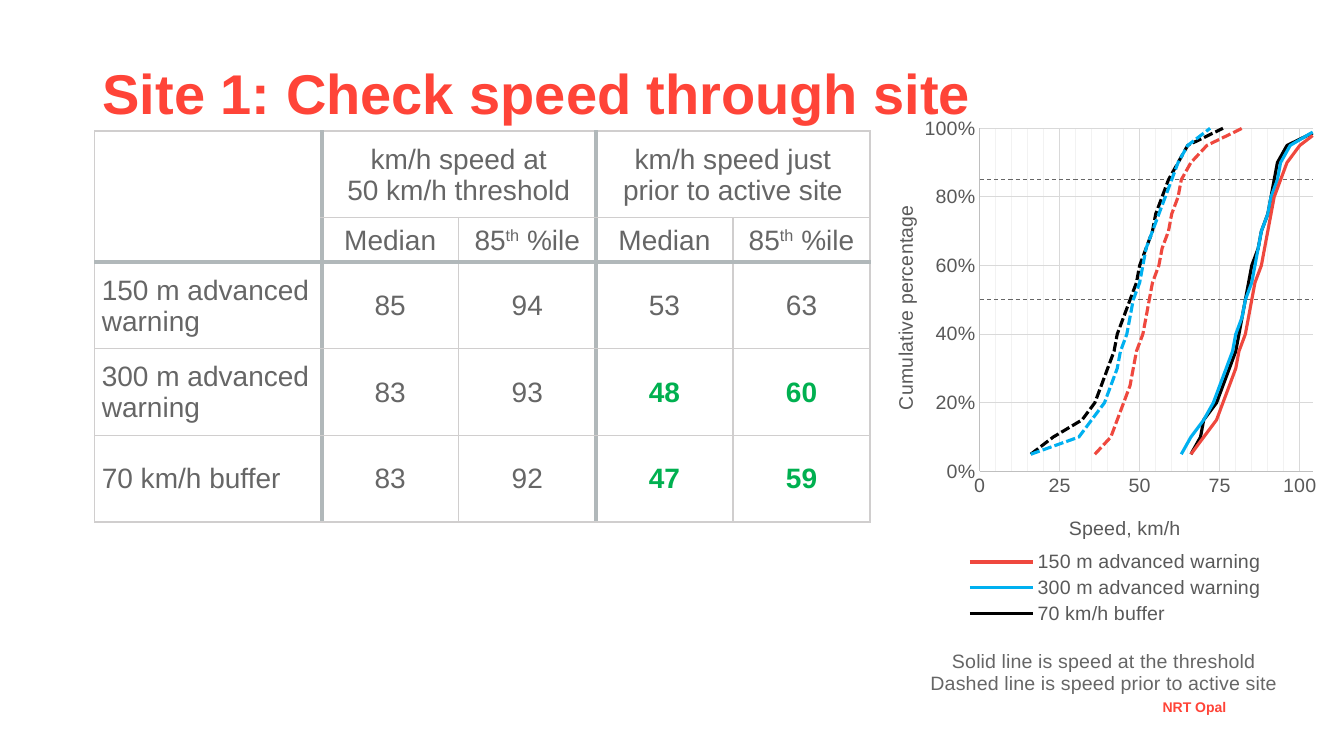
import pptx
import pptx.chart.data
import pptx.dml.color
import pptx.enum.chart
import pptx.enum.dml
import pptx.enum.text
import pptx.oxml.ns
import pptx.util
from lxml import etree

Inches, Pt = pptx.util.Inches, pptx.util.Pt
RGBColor = pptx.dml.color.RGBColor
ALIGN = pptx.enum.text.PP_ALIGN
ANCHOR = pptx.enum.text.MSO_ANCHOR
DASH = pptx.enum.dml.MSO_LINE
qn = pptx.oxml.ns.qn

RED = RGBColor(0xFF, 0x44, 0x38)
GREY = RGBColor(0x66, 0x66, 0x66)
GREEN = RGBColor(0x00, 0xB0, 0x50)
RULE_THIN = RGBColor(0xD0, 0xCE, 0xCE)
RULE_HEAVY = RGBColor(0xB1, 0xB8, 0xBA)
AXIS_TEXT = RGBColor(0x59, 0x59, 0x59)
AXIS_LINE = RGBColor(0xBF, 0xBF, 0xBF)
GRID = RGBColor(0xD9, 0xD9, 0xD9)
MINOR_GRID = RGBColor(0xF2, 0xF2, 0xF2)
LINE_RED = RGBColor(0xEF, 0x48, 0x3E)
LINE_BLUE = RGBColor(0x00, 0xB0, 0xF0)
BLACK = RGBColor(0x00, 0x00, 0x00)

TREATMENTS = ["150 m advanced warning", "300 m advanced warning", "70 km/h buffer"]
TREATMENT_COLORS = [LINE_RED, LINE_BLUE, BLACK]
SPEEDS = [[85, 94, 53, 63], [83, 93, 48, 60], [83, 92, 47, 59]]
IMPROVED = {48, 60, 47, 59}
MEASURES = [[("Median",)], [("85",), ("th", 30), (" %ile",)]]

PERCENTILES = [step / 20 for step in range(1, 21)]
THRESHOLD_SPEEDS = [
    [66, 70, 74, 76, 78, 80, 81, 83, 84, 85, 86, 88, 89, 90, 91, 92, 94, 96, 100, 107],
    [63, 66, 70, 73, 75, 77, 79, 80, 82, 83, 85, 86, 87, 88, 90, 91, 93, 94, 97, 106],
    [66, 69, 70, 74, 76, 78, 80, 81, 82, 83, 84, 85, 87, 88, 90, 91, 92, 93, 96, 107],
]
SITE_SPEEDS = [
    [36, 41, 43, 45, 47, 48, 49, 51, 52, 53, 54, 56, 57, 59, 60, 62, 63, 66, 71, 82],
    [16, 31, 35, 39, 41, 43, 44, 46, 47, 48, 50, 51, 52, 54, 56, 58, 60, 62, 65, 72],
    [16, 23, 32, 36, 38, 40, 42, 43, 45, 47, 49, 50, 52, 54, 55, 57, 59, 62, 65, 76],
]
REFERENCE_LEVELS = [0.85, 0.5]


def set_layout(parent, after, x, y, w=None, h=None, inner=False):
    """Place a chart part by fractions of the chart area."""
    for old in parent.findall(qn("c:layout")):
        parent.remove(old)
    layout = etree.Element(qn("c:layout"))
    manual = etree.SubElement(layout, qn("c:manualLayout"))
    settings = [("layoutTarget", "inner" if inner else None), ("xMode", "edge"),
                ("yMode", "edge"), ("x", x), ("y", y), ("w", w), ("h", h)]
    for tag, value in settings:
        if value is not None:
            etree.SubElement(manual, qn("c:" + tag)).set("val", str(value))
    if after is None:
        parent.insert(0, layout)
    else:
        after.addnext(layout)


def add_line(parent, tag, width, color):
    line = etree.SubElement(parent, qn(tag))
    line.set("w", str(Pt(width)))
    fill = etree.SubElement(line, qn("a:solidFill"))
    etree.SubElement(fill, qn("a:srgbClr")).set("val", str(color))


class SpeedSlide:
    font_name = "Arial"

    def __init__(self, slide):
        self.slide = slide

    def style(self, font, size, color, bold=False):
        font.name, font.size, font.bold = self.font_name, Pt(size), bold
        font.color.rgb = color

    def add_run(self, paragraph, text, size, color, bold=False, baseline=None):
        run = paragraph.add_run()
        run.text = text
        self.style(run.font, size, color, bold)
        if baseline:
            run.font._element.set("baseline", str(baseline * 1000))

    def text(self, box, text, size, color, align, anchor):
        frame = self.slide.shapes.add_textbox(*map(Inches, box)).text_frame
        frame.word_wrap = True
        frame.vertical_anchor = anchor
        paragraph = frame.paragraphs[0]
        paragraph.alignment = align
        paragraph.line_spacing = 0.9
        self.add_run(paragraph, text, size, color, bold=True)

    def fill_cell(self, cell, lines, align=ALIGN.CENTER, color=GREY, bold=False):
        """Write lines, each a list of (text, optional baseline) runs."""
        paragraph = cell.text_frame.paragraphs[0]
        paragraph.alignment = align
        for number, runs in enumerate(lines):
            if number:
                paragraph.add_line_break()
            for text, *baseline in runs:
                self.add_run(paragraph, text, 20, color, bold, *baseline)

    def speed_table(self, box, widths, heights):
        table = self.slide.shapes.add_table(
            len(heights), len(widths), *map(Inches, box)).table
        table.first_row = table.horz_banding = False
        for column, width in zip(table.columns, widths):
            column.width = Inches(width)
        for row, height in zip(table.rows, heights):
            row.height = Inches(height)
        for r in range(len(heights)):
            for c in range(len(widths)):
                cell = table.cell(r, c)
                for side, heavy in [("L", c in (1, 3)), ("R", c in (0, 2)),
                                    ("T", r == 2), ("B", r == 1)]:
                    add_line(cell._tc.get_or_add_tcPr(), "a:ln" + side,
                             3 if heavy else 1, RULE_HEAVY if heavy else RULE_THIN)
                cell.fill.background()
                cell.vertical_anchor = ANCHOR.MIDDLE
                cell.margin_left = cell.margin_right = Inches(0.07)
                cell.margin_top, cell.margin_bottom = Inches(0.01), 0
        table.cell(0, 0).merge(table.cell(1, 0))
        headings = [("km/h speed at", "50 km/h threshold"),
                    ("km/h speed just", "prior to active site")]
        for c, heading in zip((1, 3), headings):
            table.cell(0, c).merge(table.cell(0, c + 1))
            self.fill_cell(table.cell(0, c), [[(line,)] for line in heading])
            for offset, measure in enumerate(MEASURES):
                self.fill_cell(table.cell(1, c + offset), [measure])
        for r, (treatment, speeds) in enumerate(zip(TREATMENTS, SPEEDS), 2):
            self.fill_cell(table.cell(r, 0), [[(treatment,)]], ALIGN.LEFT)
            for c, speed in enumerate(speeds, 1):
                improved = speed in IMPROVED
                self.fill_cell(table.cell(r, c), [[(str(speed),)]],
                               color=GREEN if improved else GREY, bold=improved)

    def chart_title(self, owner, element, lines, color, x, y):
        frame = owner.text_frame
        for number, line in enumerate(lines):
            paragraph = frame.add_paragraph() if number else frame.paragraphs[0]
            self.add_run(paragraph, line, 14, color)
        set_layout(element, element.find(qn("c:tx")), x, y)

    def axis(self, axis, title, number_format, maximum, step, title_x, title_y):
        axis.minimum_scale, axis.maximum_scale, axis.major_unit = 0, maximum, step
        axis.major_tick_mark = axis.minor_tick_mark = pptx.enum.chart.XL_TICK_MARK.NONE
        axis.tick_labels.number_format = number_format
        axis.tick_labels.number_format_is_linked = False
        self.style(axis.tick_labels.font, 14, AXIS_TEXT)
        axis.has_major_gridlines = True
        for line, color in [(axis.format.line, AXIS_LINE),
                            (axis.major_gridlines.format.line, GRID)]:
            line.color.rgb, line.width = color, Pt(0.75)
        self.chart_title(axis.axis_title, axis.axis_title._element, [title],
                         AXIS_TEXT, title_x, title_y)

    def speed_chart(self, box):
        data = pptx.chart.data.XyChartData()
        names = TREATMENTS + [f"Series {n}" for n in range(4, 9)]
        curves = [(speeds, PERCENTILES) for speeds in THRESHOLD_SPEEDS + SITE_SPEEDS]
        curves += [([0, 110], [level] * 2) for level in REFERENCE_LEVELS]
        for name, (speeds, shares) in zip(names, curves):
            series = data.add_series(name)
            for speed, share in zip(speeds, shares):
                series.add_data_point(speed, share)
        chart = self.slide.shapes.add_chart(
            pptx.enum.chart.XL_CHART_TYPE.XY_SCATTER_SMOOTH_NO_MARKERS,
            *map(Inches, box), data).chart
        self.style(chart.font, 14, BLACK)
        plot = chart.plots[0]
        plot.vary_by_categories = False
        looks = [(color, 2.25, DASH.SOLID) for color in TREATMENT_COLORS]
        looks += [(color, 2.25, DASH.SQUARE_DOT) for color in TREATMENT_COLORS]
        looks += [(GREY, 0.75, DASH.DASH)] * len(REFERENCE_LEVELS)
        for series, (color, width, dash) in zip(plot.series, looks):
            series.smooth = True
            line = series.format.line
            line.color.rgb, line.width, line.dash_style = color, Pt(width), dash
        speed_axis = chart.category_axis
        self.axis(speed_axis, "Speed, km/h", "0", 104, 25, 0.41, 0.69)
        self.axis(chart.value_axis, "Cumulative percentage", "0%", 1, 0.2, 0.04, 0.16)
        speed_axis.minor_unit = 5
        speed_axis.has_minor_gridlines = True
        minor = speed_axis._element.find(qn("c:minorGridlines"))
        add_line(etree.SubElement(minor, qn("c:spPr")), "a:ln", 0.75, MINOR_GRID)
        chart.has_title = True
        self.chart_title(chart.chart_title, chart.chart_title._element,
                         ["Solid line is speed at the threshold",
                          "Dashed line is speed prior to active site"],
                         GREY, 0.12, 0.92)
        chart.has_legend = True
        legend = chart.legend
        legend.position = pptx.enum.chart.XL_LEGEND_POSITION.BOTTOM
        legend.include_in_layout = False
        self.style(legend.font, 14, AXIS_TEXT)
        position = legend._element.find(qn("c:legendPos"))
        set_layout(legend._element, position, 0.18, 0.75, 0.67, 0.14)
        for hidden in reversed(range(len(TREATMENTS), len(names))):
            entry = etree.Element(qn("c:legendEntry"))
            etree.SubElement(entry, qn("c:idx")).set("val", str(hidden))
            etree.SubElement(entry, qn("c:delete")).set("val", "1")
            position.addnext(entry)
        plot_area = chart._chartSpace.chart.plotArea
        set_layout(plot_area, None, 0.23, 0.03, 0.7, 0.59, inner=True)


def main():
    deck = pptx.Presentation()
    deck.slide_width, deck.slide_height = Inches(13.33), Inches(7.5)
    page = SpeedSlide(deck.slides.add_slide(deck.slide_layouts[6]))
    page.text((10.05, 6.9, 2.21, 0.27), "NRT Opal", 10, RED, ALIGN.RIGHT, ANCHOR.TOP)
    page.text((0.92, 0.6, 11.21, 0.71), "Site 1: Check speed through site",
              40, RED, ALIGN.LEFT, ANCHOR.BOTTOM)
    page.speed_table((0.94, 1.3, 7.67, 3.87), [2.25] + [1.36] * 4,
                     [0.86, 0.44] + [0.86] * 3)
    page.speed_chart((8.63, 1.1, 4.72, 5.84))
    deck.save("out.pptx")


if __name__ == "__main__":
    main()
